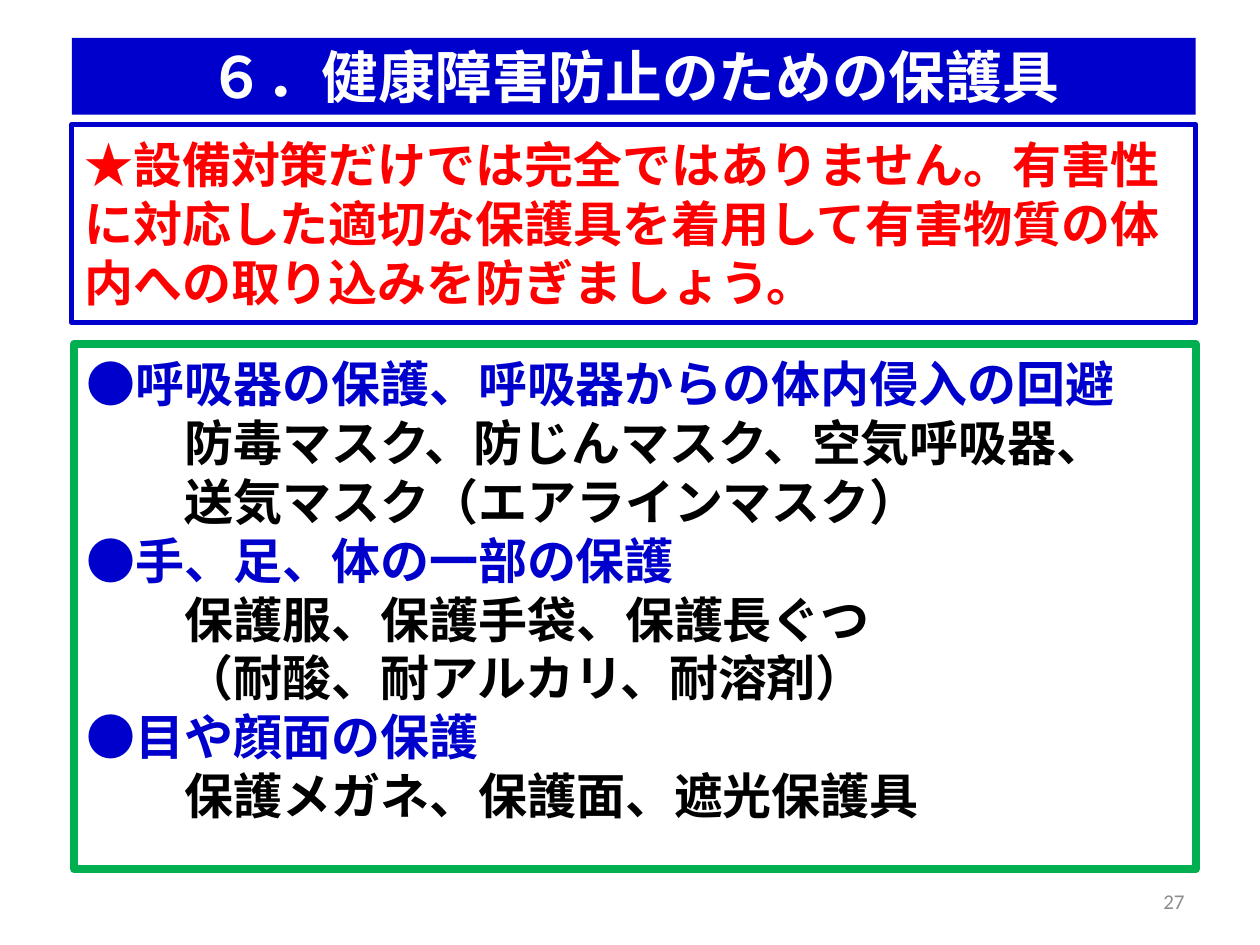
from lxml import etree
from pptx import Presentation, util as u
from pptx.dml.color import RGBColor
from pptx.enum import shapes, text
from pptx.oxml.ns import qn

PX = 9144
BLUE = RGBColor(0x00, 0x00, 0xCC)
GREEN = RGBColor(0x00, 0xB0, 0x50)
RED = RGBColor(0xFF, 0x00, 0x00)
BLACK = RGBColor(0x00, 0x00, 0x00)
WHITE = RGBColor(0xFF, 0xFF, 0xFF)
GRAY = RGBColor(0x8C, 0x8C, 0x8C)
JAPANESE = "Noto Sans CJK JP"
BODY_SIZE = 28

deck = Presentation()
deck.slide_width, deck.slide_height = 1000 * PX, 750 * PX
slide = deck.slides.add_slide(deck.slide_layouts[6])


def add_panel(left, top, width, height, fill=None, border=None, weight=0):
    panel = slide.shapes.add_shape(
        shapes.MSO_SHAPE.RECTANGLE, left * PX, top * PX, width * PX, height * PX)
    panel.shadow.inherit = False
    if fill is None:
        panel.fill.background()
    else:
        panel.fill.solid()
        panel.fill.fore_color.rgb = fill
    if border is None:
        panel.line.fill.background()
    else:
        panel.line.color.rgb = border
        panel.line.width = u.Pt(weight)
    panel.text_frame.word_wrap = True
    return panel.text_frame


def write(paragraph, words, size, color, align=text.PP_ALIGN.LEFT,
          font=JAPANESE, bold=True):
    paragraph.text = words
    paragraph.alignment = align
    paragraph.font.size = u.Pt(size)
    paragraph.font.bold = bold
    paragraph.font.name = font
    paragraph.font.color.rgb = color
    defaults = paragraph.font._element if hasattr(paragraph.font, "_element") else \
        paragraph._p.pPr.find(qn("a:defRPr"))
    etree.SubElement(defaults, qn("a:ea")).set("typeface", font)


heading = add_panel(57, 30, 892, 61, fill=BLUE)
heading.vertical_anchor = text.MSO_ANCHOR.MIDDLE
write(heading.paragraphs[0], "６．健康障害防止のための保護具", 32.4, WHITE,
      text.PP_ALIGN.CENTER)

advice = add_panel(57, 99, 892, 157, border=BLUE, weight=3)
write(advice.paragraphs[0],
      "★設備対策だけでは完全ではありません。有害性に対応した適切な保護具を着用して"
      "有害物質の体内への取り込みを防ぎましょう。", BODY_SIZE, RED)

protection = add_panel(59, 273, 890, 417, border=GREEN, weight=4.5)
equipment = [
    ("●呼吸器の保護、呼吸器からの体内侵入の回避",
     ["防毒マスク、防じんマスク、空気呼吸器、", "送気マスク（エアラインマスク）"]),
    ("●手、足、体の一部の保護",
     ["保護服、保護手袋、保護長ぐつ", "（耐酸、耐アルカリ、耐溶剤）"]),
    ("●目や顔面の保護", ["保護メガネ、保護面、遮光保護具"]),
]
for target, items in equipment:
    first = target == equipment[0][0]
    write(protection.paragraphs[0] if first else protection.add_paragraph(),
          target, BODY_SIZE, BLUE)
    for item in items:
        line = protection.add_paragraph()
        write(line, item, BODY_SIZE, BLACK)
        line._p.pPr.set("marL", str(u.Pt(2 * BODY_SIZE)))

for frame in (advice, protection):
    frame.vertical_anchor = text.MSO_ANCHOR.TOP
    frame.margin_top = 8 * PX
    for paragraph in frame.paragraphs:
        paragraph.line_spacing = u.Pt(33.6)

page_number = slide.shapes.add_textbox(717 * PX, 695 * PX, 233 * PX, 40 * PX).text_frame
page_number.word_wrap = True
page_number.vertical_anchor = text.MSO_ANCHOR.MIDDLE
write(page_number.paragraphs[0], "27", 12, GRAY, text.PP_ALIGN.RIGHT,
      font="Calibri", bold=False)

deck.save("out.pptx")
